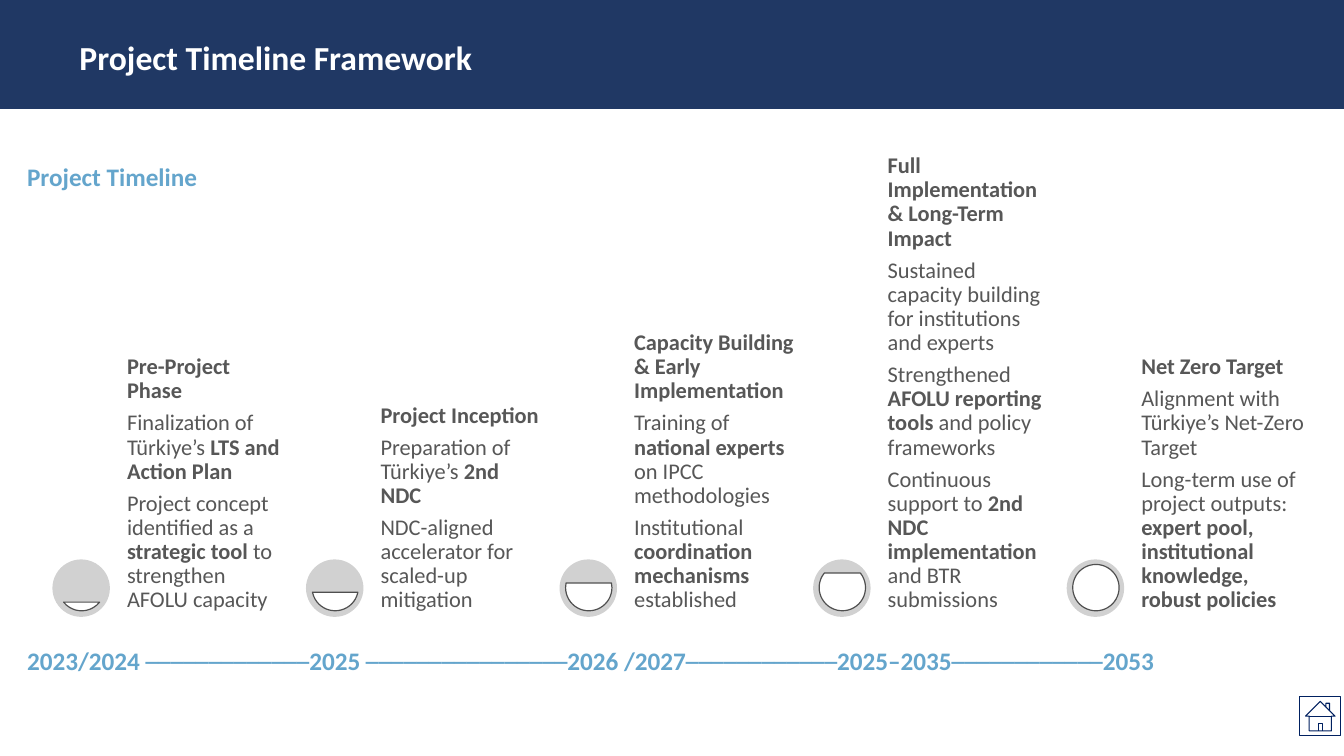
"""Build the project timeline framework slide."""
import pptx
import pptx.dml.color
import pptx.enum.shapes
import pptx.enum.text
import pptx.util
from pptx.util import Inches

SHAPES = pptx.enum.shapes.MSO_SHAPE
ANCHORS = pptx.enum.text.MSO_ANCHOR
SKY = "64A5CC"
PHASE_PITCH = 2.515
PHASES = [
    (38.87, [
        "*Pre-Project Phase*",
        "Finalization of Türkiye’s *LTS and Action Plan*",
        "Project concept identified as a *strategic tool* to strengthen AFOLU capacity",
    ]),
    (11.54, [
        "*Project Inception*",
        "Preparation of Türkiye’s *2nd NDC*",
        "NDC-aligned accelerator for scaled-up mitigation",
    ]),
    (-11.54, [
        "*Capacity Building & Early Implementation*",
        "Training of *national experts* on IPCC methodologies",
        "Institutional *coordination mechanisms *established",
    ]),
    (-38.87, [
        "*Full Implementation & Long-Term Impact*",
        "Sustained capacity building for institutions and experts",
        "Strengthened *AFOLU reporting tools* and policy frameworks",
        "Continuous support to *2nd NDC implementation *and BTR submissions",
    ]),
    (-90, [
        "*Net Zero Target*",
        "Alignment with Türkiye’s Net-Zero Target",
        "Long-term use of project outputs: *expert pool, institutional knowledge, robust policies*",
    ]),
]


def rgb(color):
    """Turn a hex string into a colour."""
    return pptx.dml.color.RGBColor.from_string(color)


def add_figure(slide, preset, box, fill=None, line=None, width=0.75):
    """Add a preset shape with an optional fill and outline."""
    figure = slide.shapes.add_shape(preset, *map(Inches, box))
    figure.shadow.inherit = False
    if fill:
        figure.fill.solid()
        figure.fill.fore_color.rgb = rgb(fill)
    else:
        figure.fill.background()
    if line:
        figure.line.color.rgb = rgb(line)
        figure.line.width = pptx.util.Pt(width)
    else:
        figure.line.fill.background()
    return figure


def add_text(slide, box, paragraphs, size=18, color=SKY, wrap=True,
             anchor=ANCHORS.TOP, inset=None, spacing=1.0, after=0):
    """Add a text box whose starred passages are bold."""
    frame = slide.shapes.add_textbox(*map(Inches, box)).text_frame
    frame.word_wrap = wrap
    frame.vertical_anchor = anchor
    if inset is not None:
        frame.margin_left = frame.margin_right = Inches(inset)
        frame.margin_top = frame.margin_bottom = Inches(inset)
    for index, words in enumerate(paragraphs):
        paragraph = frame.add_paragraph() if index else frame.paragraphs[0]
        paragraph.line_spacing = spacing
        paragraph.space_after = pptx.util.Pt(after)
        for position, passage in enumerate(words.split("*")):
            if passage:
                run = paragraph.add_run()
                run.text = passage
                run.font.name = "Calibri"
                run.font.size = pptx.util.Pt(size)
                run.font.bold = position % 2 == 1
                run.font.color.rgb = rgb(color)


def add_phase(slide, offset, angle, paragraphs):
    """Add a progress dial filled up to an angle, and its phase text."""
    add_figure(slide, SHAPES.OVAL, (0.52 + offset, 5.55, 0.57, 0.57), "D1D1D1")
    level = add_figure(slide, SHAPES.CHORD, (0.58 + offset, 5.6, 0.46, 0.46),
                       "FFFFFF", "4F4F4F", 0.85)
    level.adjustments[0] = angle % 360 * 0.6
    level.adjustments[1] = (180 - angle) * 0.6
    add_text(slide, (1.22 + offset, 5.55, 1.7, 0.57), paragraphs, size=16,
             color="575757", anchor=ANCHORS.BOTTOM, inset=0.04, spacing=0.9,
             after=5.6)


def main():
    """Build and save the slide."""
    deck = pptx.Presentation()
    deck.slide_width, deck.slide_height = Inches(13.33), Inches(7.5)
    slide = deck.slides.add_slide(deck.slide_layouts[6])
    add_figure(slide, SHAPES.RECTANGLE, (0, -0.01, 13.33, 1.09), "203864")
    add_text(slide, (0.69, 0.36, 11.96, 0.36), ["*Project Timeline Framework*"],
             size=24, color="FFFFFF", spacing=0.9)
    add_text(slide, (0.17, 1.55, 1.9, 0.4), ["*Project Timeline*"], wrap=False)
    for index, (angle, paragraphs) in enumerate(PHASES):
        add_phase(slide, index * PHASE_PITCH, angle, paragraphs)
    add_text(slide, (0.17, 6.35, 11.98, 0.4), [
        "*2023/2024 ─────────────2025 ────────────────2026 /2027"
        "────────────2025–2035────────────2053*"])
    add_figure(slide, SHAPES.ACTION_BUTTON_HOME, (12.89, 6.91, 0.41, 0.39),
               line="002060")
    deck.save("out.pptx")


if __name__ == "__main__":
    main()
